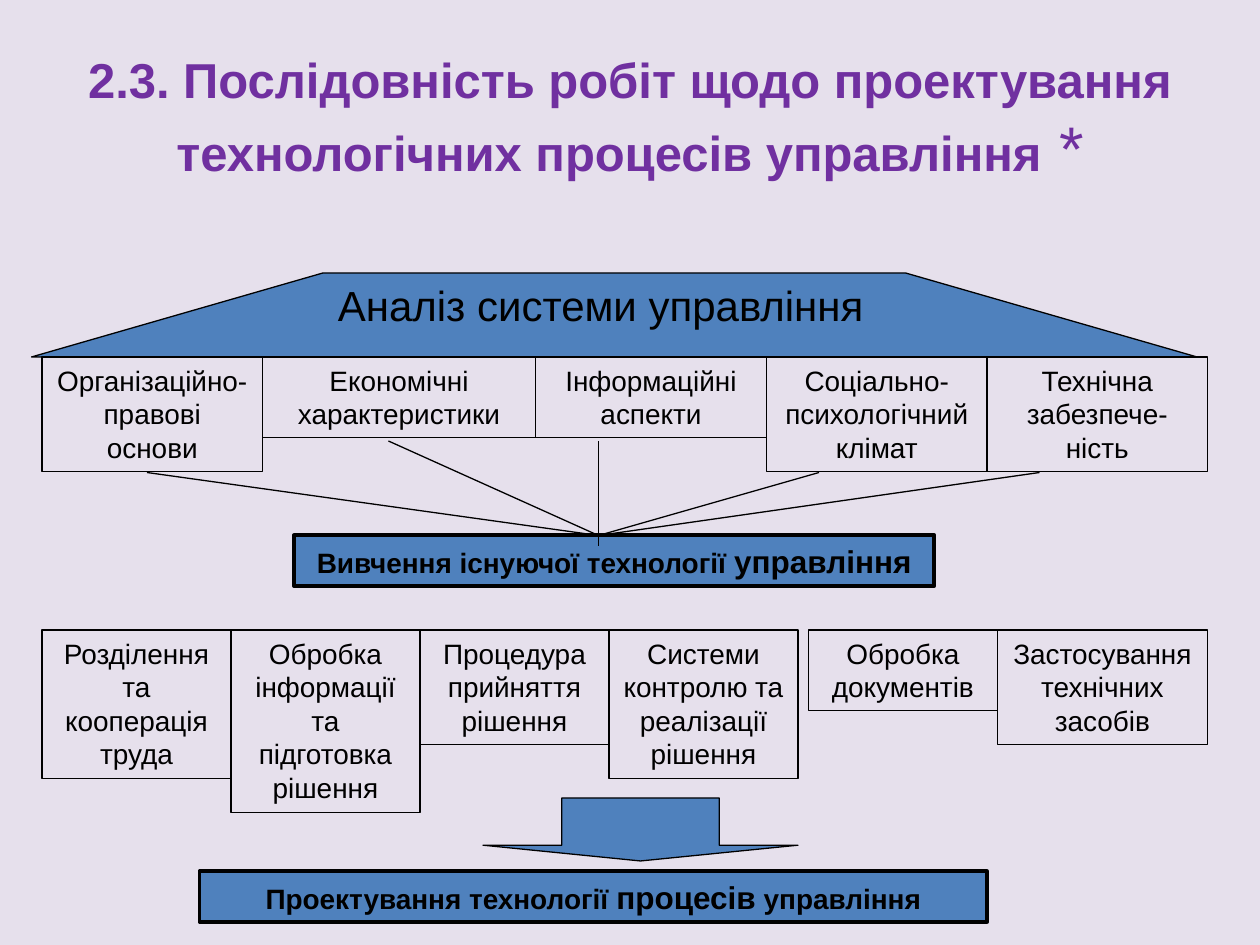
"""Build a slide showing the sequence of work in designing management processes."""
from lxml import etree
from pptx import Presentation
from pptx.dml.color import RGBColor
from pptx.enum.shapes import MSO_CONNECTOR, MSO_SHAPE
from pptx.enum.text import MSO_ANCHOR, MSO_AUTO_SIZE, PP_ALIGN
from pptx.oxml.ns import qn
from pptx.util import Inches, Pt

RECTANGLE, DOWN_ARROW = MSO_SHAPE.RECTANGLE, MSO_SHAPE.DOWN_ARROW
STRAIGHT = MSO_CONNECTOR.STRAIGHT
LEFT, CENTER = PP_ALIGN.LEFT, PP_ALIGN.CENTER
TOP, MIDDLE = MSO_ANCHOR.TOP, MSO_ANCHOR.MIDDLE
GROW, FIXED = MSO_AUTO_SIZE.SHAPE_TO_FIT_TEXT, MSO_AUTO_SIZE.NONE

THEME = {
    "font": "Arial",
    "background": RGBColor.from_string("E6E0EC"),
    "accent": RGBColor.from_string("4F81BD"),
    "ink": RGBColor.from_string("000000"),
    "title": RGBColor.from_string("7030A0"),
    "title_size": 28, "star_size": 36, "roof_size": 24, "body_size": 16, "strong_size": 18,
    "thin": 0.75, "thick": 2.25,
}

TITLE = [
    ("2.3. Послідовність робіт щодо проектування технологічних процесів управління", "title_size", True),
    (" *", "star_size", False),
]
ROOF = [("Аналіз системи управління", "roof_size", False)]
STUDY = [("Вивчення існуючої технології ", "body_size", True), ("управління", "strong_size", True)]
DESIGN = [
    ("Проектування технології ", "body_size", True),
    ("процесів", "strong_size", True),
    (" управління", "body_size", True),
]

ASPECTS = [
    ("Організаційно-правові основи", 21, 3, 0),
    ("Економічні характеристики", 26, 2, 0),
    ("Інформаційні аспекти", 22, 2, 0),
    ("Соціально-психологічний клімат", 21, 3, 0),
    ("Технічна забезпече-ність", 21, 3, 0),
]
STAGES = [
    ("Розділення та кооперація труда", 18, 4, 0),
    ("Обробка інформації та підготовка рішення", 18, 5, 0),
    ("Процедура прийняття рішення", 18, 3, 0),
    ("Системи контролю та реалізації рішення", 18, 4, 1),
    ("Обробка документів", 18, 2, 0),
    ("Застосування технічних засобів", 20, 3, 0),
]

COLUMNS, ROWS = 120, 90
CELL = Inches(10) / COLUMNS
ROW_LEFT, ASPECT_TOP, STAGE_TOP = 4, 34, 60
LINE_ROWS, PADDING_ROWS, BAND_ROWS = 3.24, 1.2, 4.8
ROOF_LEFT, ROOF_RIGHT, ROOF_TOP = 3, 114, 26
HUB = (57, 51)
RAYS = [((14, 45), HUB), ((37, 42), HUB), ((57, 42), (57, 52)), ((78, 45), HUB), ((99, 45), HUB)]


def grid(*values):
    """Convert grid units to lengths."""
    return [round(value * CELL) for value in values]


def style(shape, filled, width="thin"):
    """Apply the fill and outline."""
    shape.shadow.inherit = False
    if filled:
        shape.fill.solid()
        shape.fill.fore_color.rgb = THEME["accent"]
    else:
        shape.fill.background()
    shape.line.color.rgb = THEME["ink"]
    shape.line.width = Pt(THEME[width])


def write(shape, runs, color="ink", alignment=CENTER, anchor=TOP, fit=GROW):
    """Write formatted runs into one paragraph."""
    frame = shape.text_frame
    for name, value in {"word_wrap": True, "vertical_anchor": anchor, "auto_size": fit}.items():
        setattr(frame, name, value)
    paragraph = frame.paragraphs[0]
    paragraph.alignment = alignment
    for text, size, bold in runs:
        run = paragraph.add_run()
        run.text = text
        run.font.color.rgb = THEME[color]
        formats = {"name": THEME["font"], "size": Pt(THEME[size]), "bold": bold}
        for name, value in formats.items():
            setattr(run.font, name, value)


def add_box(slide, place, runs, filled=False, width="thin"):
    """Add an outlined rectangle with text."""
    shape = slide.shapes.add_shape(RECTANGLE, *grid(*place))
    style(shape, filled, width)
    write(shape, runs)


def add_row(slide, top, boxes):
    """Place boxes side by side with heights set by their line counts."""
    left = ROW_LEFT
    for text, width, lines, gap in boxes:
        height = PADDING_ROWS + lines * LINE_ROWS
        add_box(slide, (left, top, width, height), [(text, "body_size", False)])
        left += width + gap


def add_roof(slide):
    """Add the trapezoid above the aspects and its heading."""
    inset = (ROOF_RIGHT - ROOF_LEFT) / 4
    points = [
        (ROOF_RIGHT, ASPECT_TOP), (ROOF_RIGHT - inset, ROOF_TOP),
        (ROOF_LEFT + inset, ROOF_TOP), (ROOF_LEFT, ASPECT_TOP),
    ]
    corners = [grid(*point) for point in points]
    builder = slide.shapes.build_freeform(*corners[0])
    builder.add_line_segments(corners[1:], close=True)
    style(builder.convert_to_shape(), True)
    heading = slide.shapes.add_textbox(*grid(31, ROOF_TOP, 55, 6))
    write(heading, ROOF, alignment=LEFT)


def add_rays(slide):
    """Connect the aspects to the study band."""
    for start, end in RAYS:
        connector = slide.shapes.add_connector(STRAIGHT, *grid(*start, *end))
        connector.line.color.rgb = THEME["ink"]
        connector.line.width = Pt(THEME["thin"])
        etree.SubElement(connector._element.spPr, qn("a:effectLst"))


def main():
    """Compose and save the slide."""
    presentation = Presentation()
    presentation.slide_width, presentation.slide_height = grid(COLUMNS, ROWS)
    slide = presentation.slides.add_slide(presentation.slide_layouts[6])
    slide.background.fill.solid()
    slide.background.fill.fore_color.rgb = THEME["background"]

    title = slide.shapes.add_textbox(*grid(6, 3.6, 108, 15))
    write(title, TITLE, "title", anchor=MIDDLE, fit=FIXED)
    add_roof(slide)
    add_row(slide, ASPECT_TOP, ASPECTS)
    add_box(slide, (28, 51, 61, BAND_ROWS), STUDY, True, "thick")
    add_row(slide, STAGE_TOP, STAGES)
    arrow = slide.shapes.add_shape(DOWN_ARROW, *grid(46, 76, 30, 6))
    arrow.adjustments[0], arrow.adjustments[1] = 0.5, 0.25
    style(arrow, True)
    add_box(slide, (19, 83, 75, BAND_ROWS), DESIGN, True, "thick")
    add_rays(slide)
    presentation.save("out.pptx")


if __name__ == "__main__":
    main()
